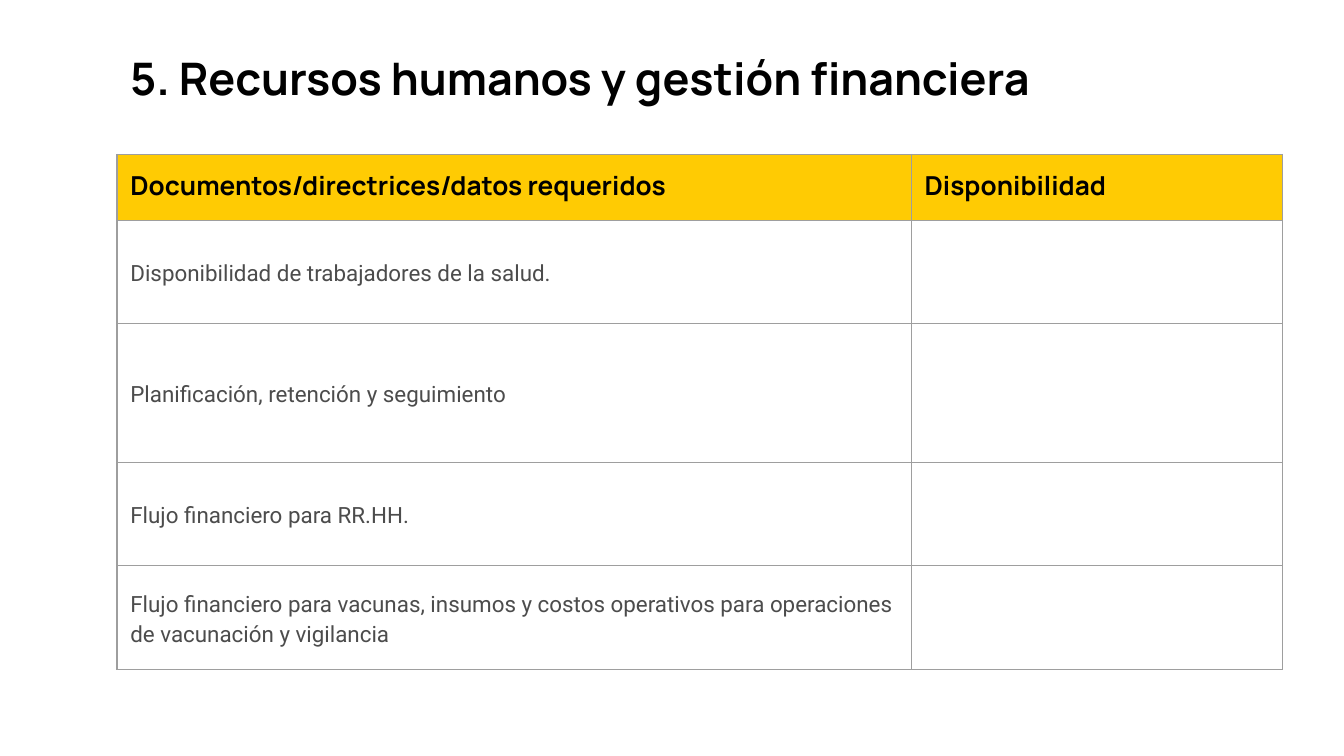
from lxml import etree
from pptx import Presentation
from pptx.dml.color import RGBColor
from pptx.enum.text import MSO_ANCHOR
from pptx.oxml.ns import qn
from pptx.util import Inches, Pt

TOP, MIDDLE = MSO_ANCHOR.TOP, MSO_ANCHOR.MIDDLE
COLORS = {"black": "000000", "gray": "4C4C4C", "gold": "FFCB03", "line": "9E9E9E"}
HEADS = ["Documentos/directrices/datos requeridos", "Disponibilidad"]
ITEMS = [
    "Disponibilidad de trabajadores de la salud.",
    "Planificación, retención y seguimiento",
    "Flujo financiero para RR.HH.",
    "Flujo financiero para vacunas, insumos y costos operativos "
    "para operaciones de vacunación y vigilancia",
]
COLS = [5.91, 2.76]
ROWS = [0.49, 0.77, 1.03, 0.77, 0.77]


def write(frame, text, size=12, font="Roboto", color="gray", bold=False, space=None):
    """Put formatted text in the first paragraph of a frame."""
    para = frame.paragraphs[0]
    para.line_spacing = space
    run = para.add_run()
    run.text = text
    run.font.size = Pt(size)
    run.font.name = font
    run.font.bold = bold
    run.font.color.rgb = RGBColor.from_string(COLORS[color])


class Page:
    """Hold the style and the current slide."""

    head = {"font": "Manrope", "color": "black", "bold": True}
    body = {"space": 1.15}
    inset = Inches(0.1)

    def __init__(self, slide):
        """Keep the slide to draw on."""
        self.slide = slide

    def pad(self, box):
        """Set equal margins on a cell or text frame."""
        for side in ("left", "right", "top", "bottom"):
            setattr(box, f"margin_{side}", self.inset)

    def title(self, text, left, top, width, height):
        """Add the title box."""
        box = self.slide.shapes.add_textbox(
            Inches(left), Inches(top), Inches(width), Inches(height))
        frame = box.text_frame
        frame.word_wrap = True
        frame.vertical_anchor = TOP
        self.pad(frame)
        write(frame, text, size=24, **self.head)

    def border(self, cell):
        """Draw a thin line on each side of a cell."""
        props = cell._tc.get_or_add_tcPr()
        for index, side in enumerate(("lnL", "lnR", "lnT", "lnB")):
            line = etree.Element(qn(f"a:{side}"), w=str(Pt(0.75)))
            fill = etree.SubElement(line, qn("a:solidFill"))
            etree.SubElement(fill, qn("a:srgbClr"), val=COLORS["line"])
            props.insert(index, line)

    def cell(self, cell, text, head):
        """Style and fill one cell."""
        self.pad(cell)
        cell.vertical_anchor = TOP if head else MIDDLE
        if head:
            cell.fill.solid()
            cell.fill.fore_color.rgb = RGBColor.from_string(COLORS["gold"])
            write(cell.text_frame, text, size=14, **self.head)
        else:
            cell.fill.background()
            if text:
                write(cell.text_frame, text, **self.body)
        self.border(cell)

    def table(self, data, left, top, cols, rows):
        """Add a table with a header row."""
        table = self.slide.shapes.add_table(
            len(rows), len(cols), Inches(left), Inches(top),
            Inches(sum(cols)), Inches(sum(rows))).table
        table.horz_banding = False
        for col, width in zip(table.columns, cols):
            col.width = Inches(width)
        for index, (row, height) in enumerate(zip(table.rows, rows)):
            row.height = Inches(height)
            for cell, text in zip(row.cells, data[index]):
                self.cell(cell, text, index == 0)


def main():
    """Build and save the slide."""
    deck = Presentation()
    deck.slide_width = Inches(10)
    deck.slide_height = Inches(10 * 9 / 16)
    page = Page(deck.slides.add_slide(deck.slide_layouts[6]))
    page.title("5. Recursos humanos y gestión financiera", 0.87, 0.28, 9.13, 0.59)
    page.table([HEADS] + [[item, ""] for item in ITEMS], 0.87, 1.15, COLS, ROWS)
    deck.save("out.pptx")


if __name__ == "__main__":
    main()
